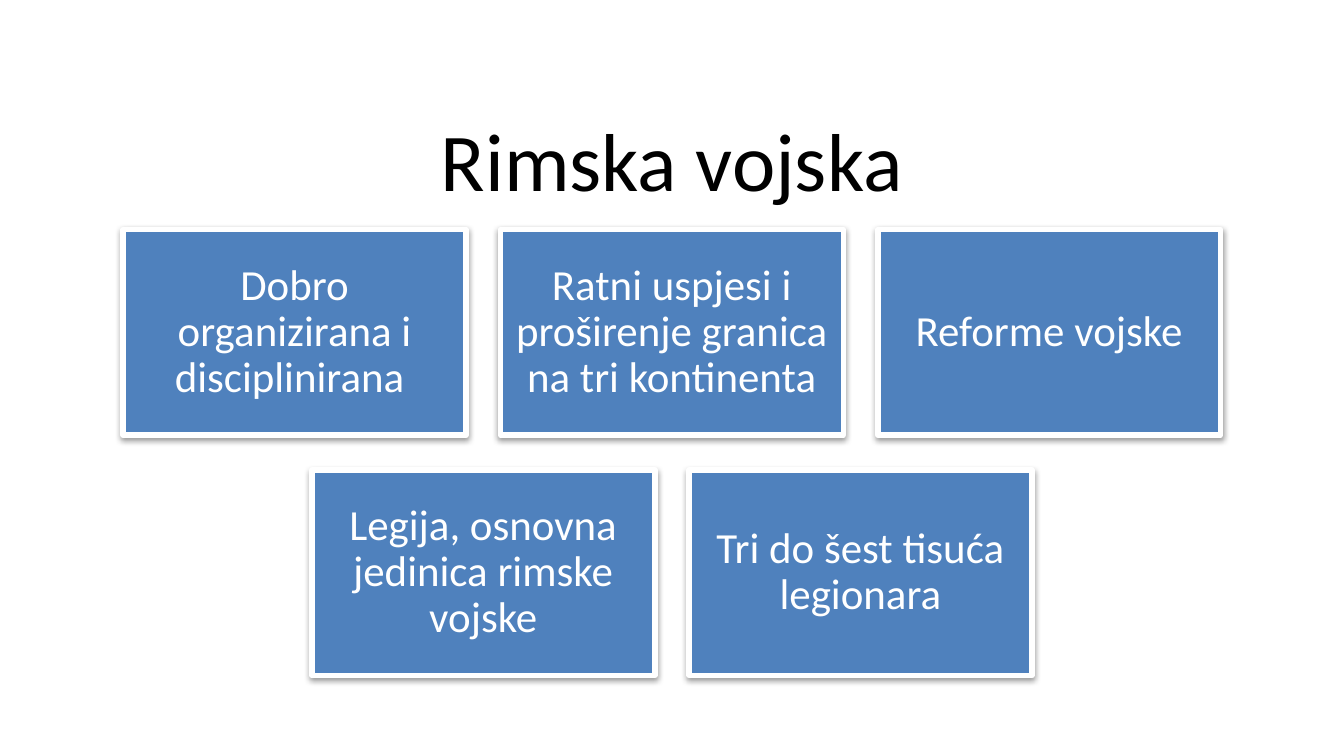
"""Build the slide about the Roman army with five cards in two centred rows."""
from lxml import etree
from pptx import Presentation
from pptx.dml.color import RGBColor
from pptx.enum.shapes import MSO_SHAPE
from pptx.enum.text import MSO_ANCHOR, PP_ALIGN
from pptx.oxml import parse_xml
from pptx.oxml.ns import qn
from pptx.util import Cm, Pt

RECTANGLE = MSO_SHAPE.RECTANGLE
MIDDLE = MSO_ANCHOR.MIDDLE
CENTER = PP_ALIGN.CENTER
COLORS = {"title": "000000", "card": "4F81BD", "white": "FFFFFF", "shadow": "000000"}
FONT = "Calibri"
SLIDE_WIDTH, SLIDE_HEIGHT = 25.4, 14.29
CARD_WIDTH, CARD_HEIGHT, GAP = 6.48, 3.89, 0.65
FIRST_ROW_TOP = 4.34
ROWS = [
    [
        "Dobro organizirana i disciplinirana ",
        "Ratni uspjesi i proširenje granica na tri kontinenta",
        "Reforme vojske",
    ],
    ["Legija, osnovna jedinica rimske vojske", "Tri do šest tisuća legionara"],
]


def set_text(shape, text, size, color):
    text_frame = shape.text_frame
    text_frame.word_wrap = True
    text_frame.vertical_anchor = MIDDLE
    text_frame.margin_left = text_frame.margin_right = Cm(0.25)
    text_frame.margin_top = text_frame.margin_bottom = Cm(0.25)
    text_frame.text = text
    paragraph = text_frame.paragraphs[0]
    paragraph.alignment = CENTER
    paragraph.line_spacing = 0.9
    font = paragraph.runs[0].font
    font.name = FONT
    font.size = Pt(size)
    font.color.rgb = RGBColor.from_string(COLORS[color])


def add_shadow(shape):
    shape.shadow.inherit = False
    effects = shape._element.spPr.find(qn("a:effectLst"))
    shadow = etree.SubElement(
        effects, qn("a:outerShdw"), blurRad=str(Pt(3.1)), dist=str(Pt(1.6)),
        dir="5400000", rotWithShape="0",
    )
    color = etree.SubElement(shadow, qn("a:srgbClr"), val=COLORS["shadow"])
    etree.SubElement(color, qn("a:alpha"), val="38000")


presentation = Presentation()
presentation.slide_width = Cm(SLIDE_WIDTH)
presentation.slide_height = Cm(SLIDE_HEIGHT)
slide = presentation.slides.add_slide(presentation.slide_layouts[6])

title = slide.shapes.add_textbox(Cm(1.27), Cm(2.13), Cm(22.86), Cm(1.98))
set_text(title, "Rimska vojska", 44, "title")

for row_index, row in enumerate(ROWS):
    row_width = len(row) * (CARD_WIDTH + GAP) - GAP
    row_left = (SLIDE_WIDTH - row_width) / 2
    top = FIRST_ROW_TOP + row_index * (CARD_HEIGHT + GAP)
    for column_index, text in enumerate(row):
        left = row_left + column_index * (CARD_WIDTH + GAP)
        card = slide.shapes.add_shape(
            RECTANGLE, Cm(left), Cm(top), Cm(CARD_WIDTH), Cm(CARD_HEIGHT)
        )
        card.fill.solid()
        card.fill.fore_color.rgb = RGBColor.from_string(COLORS["card"])
        card.line.color.rgb = RGBColor.from_string(COLORS["white"])
        card.line.width = Pt(3)
        add_shadow(card)
        set_text(card, text, 23, "white")

presentation.save("out.pptx")
